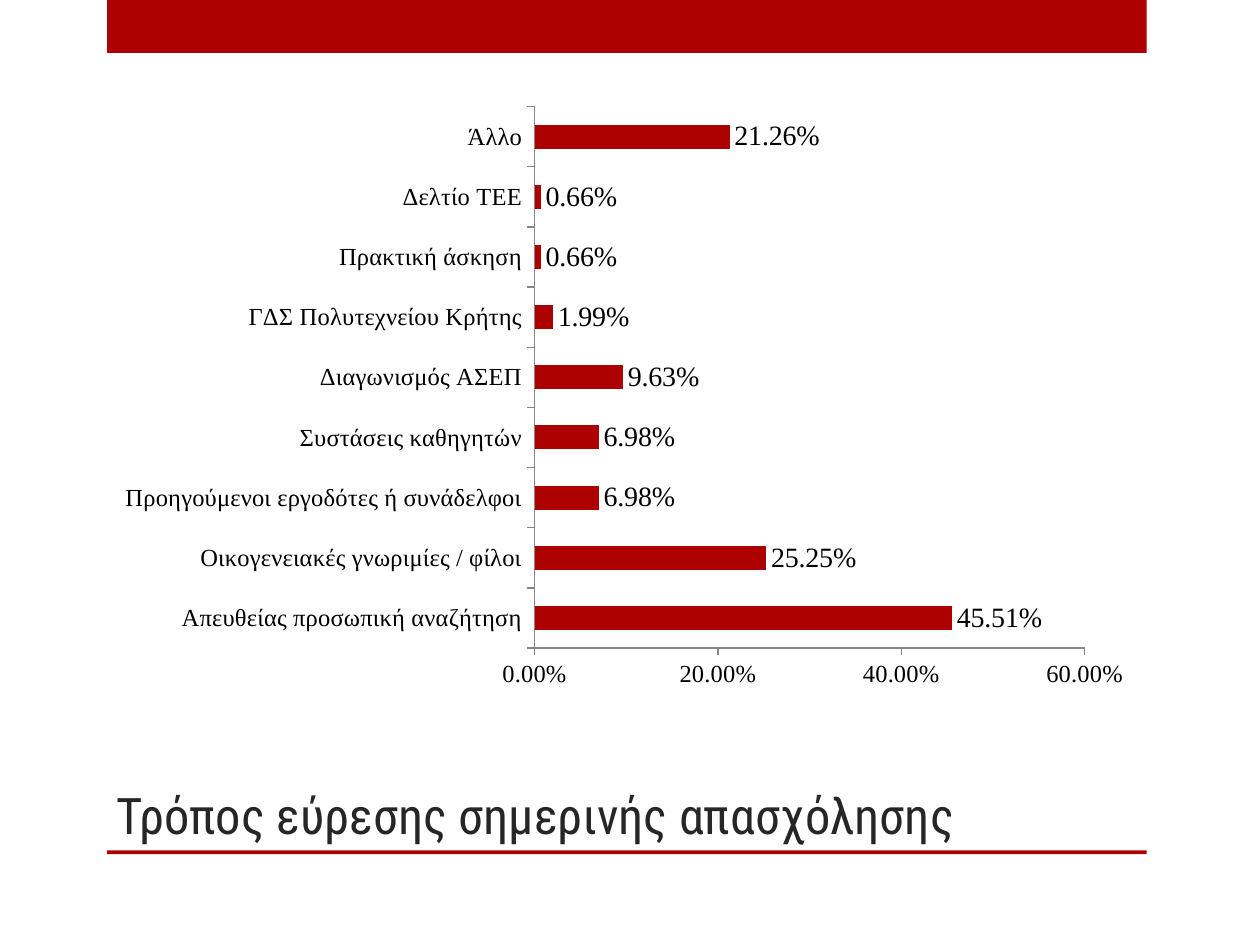
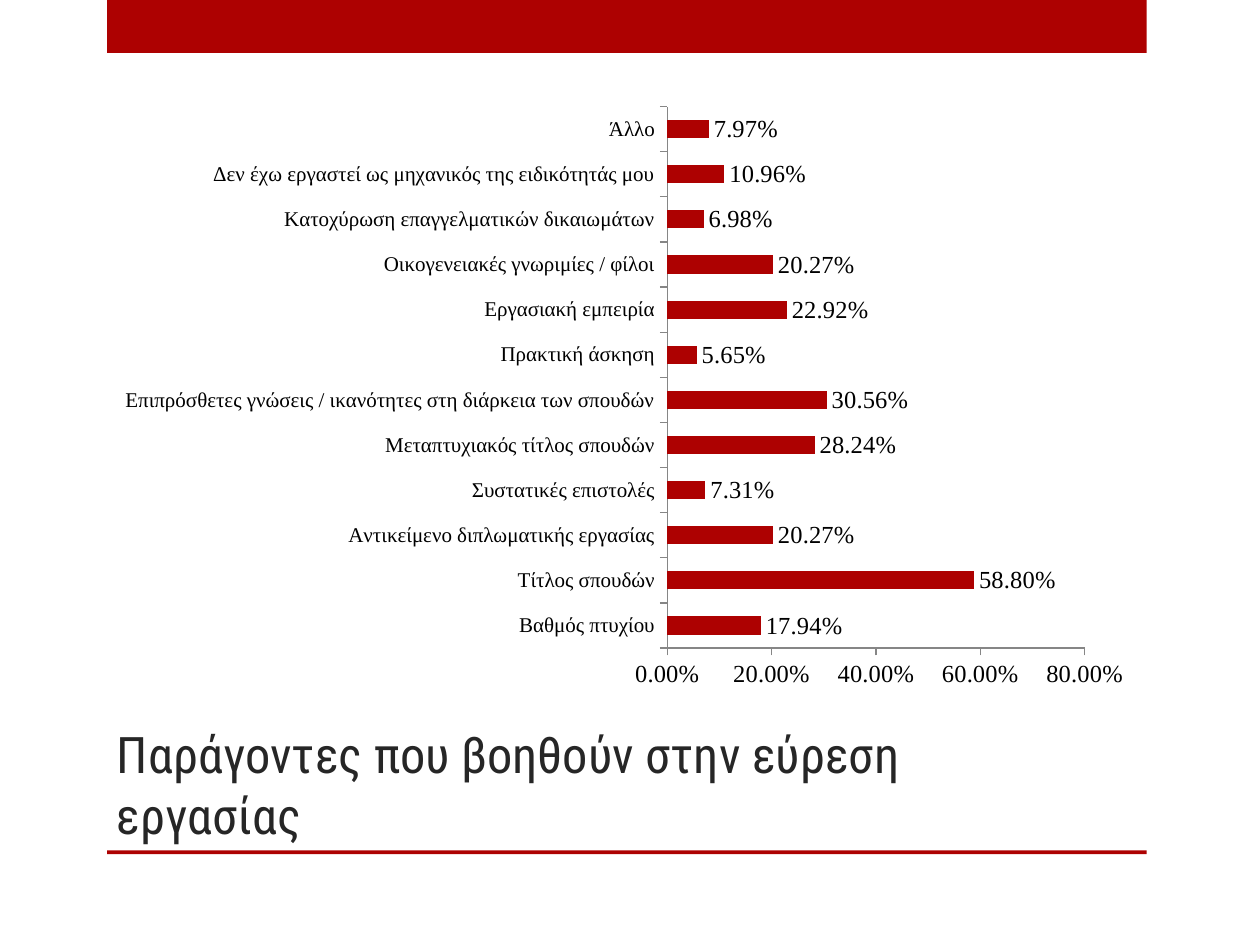
"""Build two slides of survey bar charts with a shared red frame."""
from pptx import Presentation
from pptx import util as u
from pptx.chart.data import CategoryChartData
from pptx.dml.color import RGBColor
from pptx.enum import chart as ch, shapes, text

COLORS = {"red": "AD0101", "ink": "262626", "black": "000000", "axis": "868686"}
FONTS = {"title": "Roboto Condensed", "chart": "Times New Roman"}
PERCENT = "0.00%"

SLIDES = [
    {
        "title": "Τρόπος εύρεσης σημερινής απασχόλησης",
        "sizes": {"category": 14, "label": 16},
        "answers": {
            "Απευθείας προσωπική αναζήτηση": 0.4551,
            "Οικογενειακές γνωριμίες / φίλοι": 0.2525,
            "Προηγούμενοι εργοδότες ή συνάδελφοι": 0.0698,
            "Συστάσεις καθηγητών": 0.0698,
            "Διαγωνισμός ΑΣΕΠ": 0.0963,
            "ΓΔΣ Πολυτεχνείου Κρήτης": 0.0199,
            "Πρακτική άσκηση": 0.0066,
            "Δελτίο ΤΕΕ": 0.0066,
            "Άλλο": 0.2126,
        },
    },
    {
        "title": "Παράγοντες που βοηθούν στην εύρεση εργασίας",
        "sizes": {"category": 12, "label": 14},
        "answers": {
            "Βαθμός πτυχίου": 0.1794,
            "Τίτλος σπουδών": 0.588,
            "Αντικείμενο διπλωματικής εργασίας": 0.2027,
            "Συστατικές επιστολές": 0.0731,
            "Μεταπτυχιακός τίτλος σπουδών": 0.2824,
            "Επιπρόσθετες γνώσεις / ικανότητες στη διάρκεια των σπουδών": 0.3056,
            "Πρακτική άσκηση": 0.0565,
            "Εργασιακή εμπειρία": 0.2292,
            "Οικογενειακές γνωριμίες / φίλοι": 0.2027,
            "Κατοχύρωση επαγγελματικών δικαιωμάτων": 0.0698,
            "Δεν έχω εργαστεί ως μηχανικός της ειδικότητάς μου": 0.1096,
            "Άλλο": 0.0797,
        },
    },
]


def assign(target, **values):
    """Set each named attribute on the target."""
    for name, value in values.items():
        setattr(target, name, value)


class Deck:
    """Hold the presentation, its style and the current slide."""

    def __init__(self, width=10, height=7.5):
        """Start a presentation of the given size in inches."""
        self.prs = Presentation()
        assign(self.prs, slide_width=u.Inches(width), slide_height=u.Inches(height))
        self.s = None

    def box(self, left, top, width, height):
        """Turn shares of the slide's size into lengths."""
        w, h = self.prs.slide_width, self.prs.slide_height
        return int(left * w), int(top * h), int(width * w), int(height * h)

    def font(self, font, face, size, color):
        """Apply face, size and colour to a font."""
        assign(font, name=FONTS[face], size=u.Pt(size), bold=False)
        font.color.rgb = RGBColor.from_string(COLORS[color])

    def slide(self):
        """Add a blank slide with the top band and the title rule."""
        self.s = self.prs.slides.add_slide(self.prs.slide_layouts[6])
        for top, height in ((0, 0.42 / 7.5), (0.9, 0.03 / 7.5)):
            self.band(0.085, top, 0.825, height)

    def band(self, *shares):
        """Add a plain red rectangle."""
        sp = self.s.shapes.add_shape(shapes.MSO_SHAPE.RECTANGLE, *self.box(*shares))
        sp.shadow.inherit = False
        sp.fill.solid()
        sp.fill.fore_color.rgb = RGBColor.from_string(COLORS["red"])
        sp.line.fill.background()

    def title(self, words):
        """Add the slide title, resting on the rule."""
        sp = self.s.shapes.add_textbox(*self.box(0.083, 0.752, 0.742, 0.148))
        tf = sp.text_frame
        assign(tf, word_wrap=True, vertical_anchor=text.MSO_ANCHOR.BOTTOM)
        r = tf.paragraphs[0].add_run()
        r.text = words
        self.font(r.font, "title", 28.8, "ink")

    def axis(self, axis, size):
        """Style one chart axis."""
        assign(axis, has_major_gridlines=False,
               major_tick_mark=ch.XL_TICK_MARK.OUTSIDE,
               minor_tick_mark=ch.XL_TICK_MARK.NONE)
        self.font(axis.tick_labels.font, "chart", size, "black")
        axis.format.line.color.rgb = RGBColor.from_string(COLORS["axis"])
        axis.format.line.width = u.Pt(0.75)

    def bars(self, answers, sizes):
        """Add a bar chart of answer shares."""
        data = CategoryChartData(number_format=PERCENT)
        data.categories = list(answers)
        data.add_series("Series 1", list(answers.values()))
        frame = self.s.shapes.add_chart(
            ch.XL_CHART_TYPE.BAR_CLUSTERED, *self.box(0.083, 0.1, 0.825, 0.641), data)
        chart = frame.chart
        assign(chart, has_legend=False, has_title=False)
        self.font(chart.font, "chart", 18, "black")
        self.axis(chart.category_axis, sizes["category"])
        self.axis(chart.value_axis, 14)
        chart.value_axis.major_unit = 0.2
        assign(chart.value_axis.tick_labels, number_format=PERCENT,
               number_format_is_linked=False)
        plot = chart.plots[0]
        assign(plot, gap_width=150, vary_by_categories=False, has_data_labels=True)
        assign(plot.data_labels, show_value=True, number_format=PERCENT,
               number_format_is_linked=False,
               position=ch.XL_LABEL_POSITION.OUTSIDE_END)
        self.font(plot.data_labels.font, "chart", sizes["label"], "black")
        fill = plot.series[0].format.fill
        fill.solid()
        fill.fore_color.rgb = RGBColor.from_string(COLORS["red"])


def main():
    """Build and save the slides."""
    deck = Deck()
    for content in SLIDES:
        deck.slide()
        deck.title(content["title"])
        deck.bars(content["answers"], content["sizes"])
    deck.prs.save("out.pptx")


if __name__ == "__main__":
    main()
